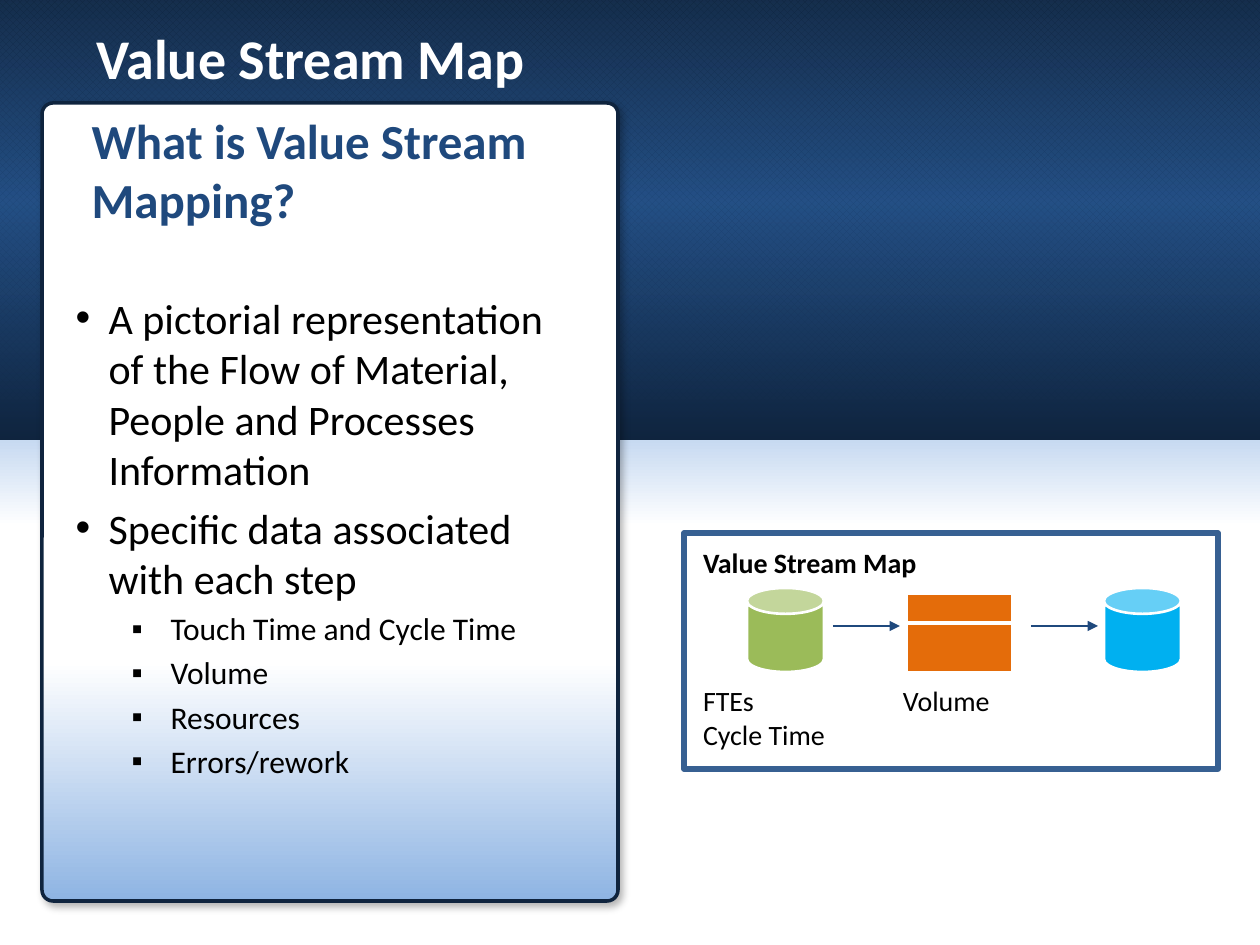
"""Build the Value Stream Map slide."""
from lxml import etree
from pptx import Presentation, util as u
from pptx.dml.color import RGBColor
from pptx.enum import dml, shapes, text
from pptx.oxml import ns

SCALE = 914400 / 126
FONT = "Calibri"
HUES = {
    "black": "000000", "white": "FFFFFF", "navy": "0F243E", "blue": "1F497D",
    "edge": "376092", "mid": "558ED5", "pale": "8EB4E3",
    "green": "9BBB59", "cyan": "00B0F0", "orange": "E46C0A",
}
KIND = shapes.MSO_SHAPE


def px(*nums):
    """Turn pixel lengths into EMU."""
    return [u.Emu(round(n * SCALE)) for n in nums]


def hue(name):
    """Look up a named colour."""
    return RGBColor.from_string(HUES[name])


def node(base, tag, **attrs):
    """Append a DrawingML element to a parent."""
    item = etree.SubElement(base, ns.qn("a:" + tag))
    for key, val in attrs.items():
        item.set(key, str(val))
    return item


def write(frame, lines, size=16, color="black", bold=False, anchor="TOP", pad=None):
    """Fill a text frame with left-aligned lines in one format."""
    frame.word_wrap = True
    frame.auto_size = text.MSO_AUTO_SIZE.NONE
    frame.vertical_anchor = text.MSO_ANCHOR[anchor]
    if pad is not None:
        frame.margin_left = frame.margin_right = pad
        frame.margin_top = frame.margin_bottom = pad
    frame.text = "\n".join(lines)
    for para in frame.paragraphs:
        para.alignment = text.PP_ALIGN.LEFT
        font = para.font
        font.name, font.size, font.bold = FONT, u.Pt(size), bold
        font.color.rgb = hue(color)


def shape(base, kind, box, fill=None, line=None, width=1.5, adj=None):
    """Add a preset shape with a plain fill and outline."""
    item = base.add_shape(kind, *px(*box))
    item.shadow.inherit = False
    if fill:
        item.fill.solid()
        item.fill.fore_color.rgb = hue(fill)
    else:
        item.fill.background()
    if line:
        item.line.color.rgb = hue(line)
        item.line.width = u.Pt(width)
    else:
        item.line.fill.background()
    if adj is not None:
        item.adjustments[0] = adj
    return item


def shade(item, stops):
    """Give a shape a gradient that runs from top to bottom."""
    item.fill.gradient()
    item.fill.gradient_angle = 270
    grid = item._element.spPr.find(".//" + ns.qn("a:gsLst"))
    for old in list(grid):
        grid.remove(old)
    for pos, name, alpha in stops:
        stop = node(grid, "gs", pos=pos * 1000)
        tint = node(stop, "srgbClr", val=HUES[name])
        if alpha < 100:
            node(tint, "alpha", val=alpha * 1000)


def scene(base, box):
    """Draw the dark band and the pale glow below it."""
    left, top, wide, high = box
    glow = shape(base, KIND.RECTANGLE, (left + 3, top + 358, wide, 583))
    shade(glow, [(0, "pale", 100), (29, "white", 100), (100, "white", 100)])
    weave = shape(base, KIND.RECTANGLE, box)
    weave.fill.patterned()
    weave.fill.pattern = dml.MSO_PATTERN.OUTLINED_DIAMOND
    weave.fill.fore_color.rgb = hue("navy")
    weave.fill.back_color.rgb = hue("mid")
    band = shape(base, KIND.RECTANGLE, box)
    shade(band, [(0, "navy", 90), (46, "blue", 90), (100, "navy", 100)])


def card(base, box):
    """Draw the rounded panel with its soft shadow."""
    item = shape(base, KIND.ROUNDED_RECTANGLE, box, line="navy", width=2, adj=0.019)
    shade(item, [(70, "white", 100), (100, "pale", 100)])
    effect = item._element.spPr.find(ns.qn("a:effectLst"))
    cast = node(effect, "outerShdw", blurRad=u.Pt(4.5), dist=u.Pt(2.6),
                dir=53 * 60000, algn="tl", rotWithShape=0)
    node(node(cast, "srgbClr", val=HUES["black"]), "alpha", val=30000)


def place(item, box):
    """Move a placeholder to a box and return its text frame."""
    item.left, item.top, item.width, item.height = px(*box)
    return item.text_frame


def points(frame, heads, subs):
    """Write a two-level bullet list."""
    write(frame, heads + subs, size=24)
    for num, para in enumerate(frame.paragraphs):
        deep = num >= len(heads)
        para.level = int(deep)
        left, hang = px(95, 39) if deep else px(33, 33)
        props = para._p.get_or_add_pPr()
        props.set("marL", str(left))
        props.set("indent", str(-hang))
        for old in list(props):
            props.remove(old)
        node(node(props, "buClr"), "srgbClr", val=HUES["black"])
        node(props, "buFont", typeface="Arial")
        node(props, "buChar", char="▪" if deep else "•")
        para.font.name, para.font.size = FONT, u.Pt(18 if deep else 24)
        para.font.color.rgb = hue("black")


def arrow(base, left, top, wide):
    """Add a horizontal arrow."""
    item = base.add_connector(shapes.MSO_CONNECTOR.STRAIGHT,
                              *px(left, top, left + wide, top))
    item.line.color.rgb = hue("blue")
    item.line.width = u.Pt(1.5)
    node(item.line._get_or_add_ln(), "tailEnd", type="triangle")
    node(item._element.spPr, "effectLst")


def chart(base, box):
    """Draw the framed sample map as one group."""
    left, top, wide, high = box
    group = base.add_group_shape().shapes
    shape(group, KIND.RECTANGLE, box, line="edge", width=3)
    labels = [
        (19, 13, 513, 34, ["Value Stream Map"], True),
        (19, 151, 220, 67, ["FTEs", "Cycle Time"], False),
        (219, 151, 220, 34, ["Volume"], False),
    ]
    for dx, dy, w, h, lines, bold in labels:
        note = group.add_textbox(*px(left + dx, top + dy, w, h))
        write(note.text_frame, lines, bold=bold, pad=0)
    for dx, fill in ((63, "green"), (420, "cyan")):
        shape(group, KIND.CAN, (left + dx, top + 55, 77, 84), fill, "white", adj=0.336)
    for dx in (149, 347):
        arrow(group, left + dx, top + 93, 67)
    for dy, h in ((61, 28), (91, 48)):
        shape(group, KIND.RECTANGLE, (left + 223, top + dy, 105, h), "orange", "white")


def main():
    """Build and save the slide."""
    deck = Presentation()
    deck.slide_width, deck.slide_height = u.Inches(10), u.Inches(7.5)
    slide = deck.slides.add_slide(deck.slide_layouts[4])
    base = slide.shapes
    title, head, body, *spare = list(slide.placeholders)
    for item in spare:
        item._element.getparent().remove(item._element)
    scene(base, (-4, -1, 1265, 441))
    card(base, (42, 103, 576, 798))
    for item in (title, head, body):
        base._spTree.append(item._element)
    write(place(title, (84, 16, 1092, 81)), ["Value Stream Map"],
          size=32, color="white", bold=True, anchor="BOTTOM")
    write(place(head, (79, 147, 536, 88)), ["What is Value Stream Mapping?"],
          size=28, color="blue", bold=True, anchor="BOTTOM")
    points(place(body, (63, 286, 536, 617)),
           ["A pictorial representation of the Flow of Material,\vPeople and Processes Information",
            "Specific data associated with each step"],
           ["Touch Time and Cycle Time", "Volume", "Resources", "Errors/rework"])
    chart(base, (684, 533, 534, 236))
    deck.save("out.pptx")


if __name__ == "__main__":
    main()
